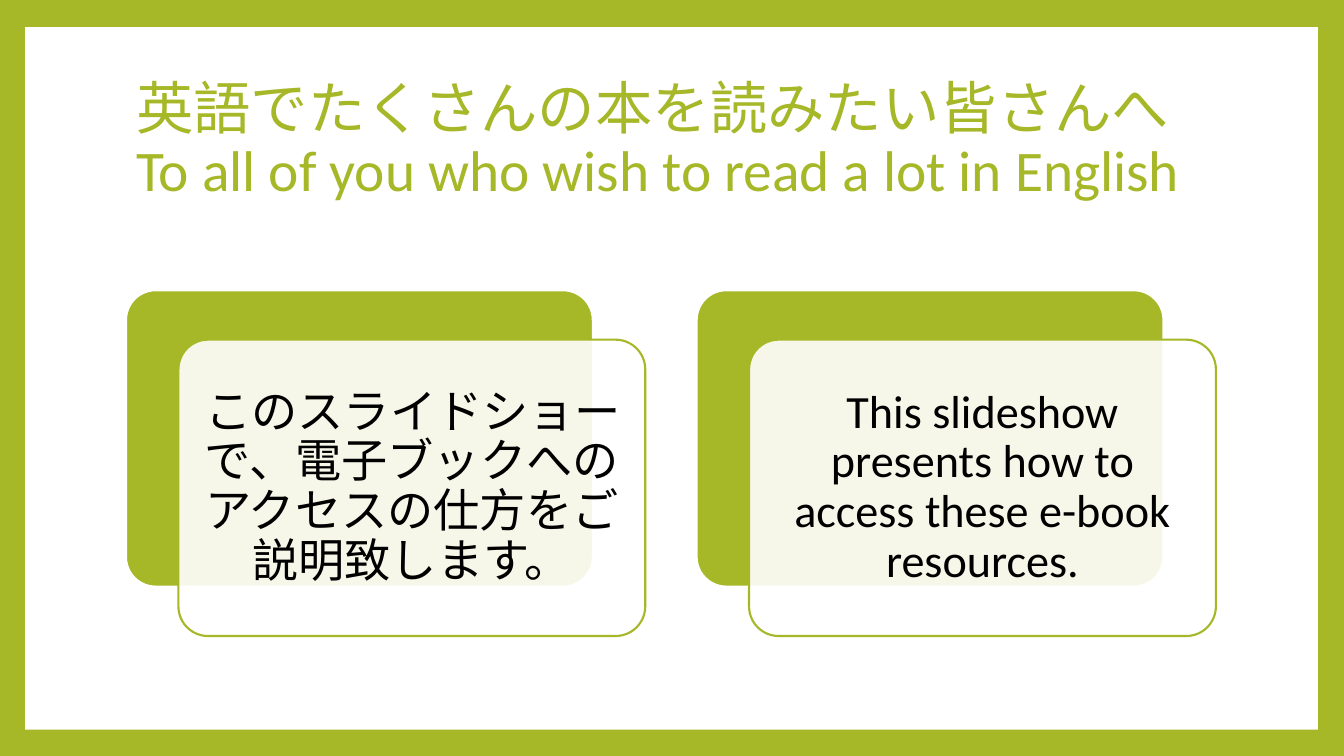
from lxml import etree
from pptx import Presentation
from pptx.dml.color import RGBColor
from pptx.enum.shapes import MSO_SHAPE as Preset
from pptx.enum.text import MSO_ANCHOR as Anchor, MSO_AUTO_SIZE as AutoSize, PP_ALIGN as Align
from pptx.oxml.ns import qn
from pptx.util import Inches, Pt

TITLE_LINES = ["英語でたくさんの本を読みたい皆さんへ",
               "To all of you who wish to read a lot in English"]
MESSAGES = ["このスライドショーで、電子ブックへのアクセスの仕方をご説明致します。",
            "This slideshow presents how to access these e-book resources."]
GREEN, WHITE, BLACK = "A6B727", "FFFFFF", "000000"
FONT = "Calibri"

CARD_LEFT, CARD_TOP = 1.25, 2.88
CARD_WIDTH, CARD_HEIGHT = 4.63, 2.94
CARD_PITCH = 5.66
OFFSET_X, OFFSET_Y = 0.52, 0.49
TEXT_INSET = 0.14


def rgb(value):
    return RGBColor.from_string(value)


def add_box(slide, preset, left, top, width, height, fill, line=None):
    box = slide.shapes.add_shape(preset, Inches(left), Inches(top), Inches(width), Inches(height))
    box.shadow.inherit = False
    box.fill.solid()
    box.fill.fore_color.rgb = rgb(fill)
    if line:
        box.line.color.rgb = rgb(line)
        box.line.width = Pt(1.5)
    else:
        box.line.fill.background()
    return box


def add_card(slide, left, top, fill, line):
    card = add_box(slide, Preset.ROUNDED_RECTANGLE, left, top, CARD_WIDTH, CARD_HEIGHT, fill, line)
    card.adjustments[0] = 0.1
    return card


def set_opacity(shape, percent):
    color = shape.fill._xPr.find(qn("a:solidFill"))[0]
    etree.SubElement(color, qn("a:alpha")).set("val", str(percent * 1000))


def style(paragraph, size, color, align):
    paragraph.alignment = align
    paragraph.line_spacing = 0.9
    paragraph.font.name = FONT
    paragraph.font.size = Pt(size)
    paragraph.font.color.rgb = rgb(color)


def add_title(slide):
    title = slide.shapes.title
    title.left, title.top = Inches(1.25), Inches(0.67)
    title.width, title.height = Inches(10.8), Inches(1.48)
    frame = title.text_frame
    frame.auto_size = AutoSize.NONE
    frame.word_wrap = True
    frame.vertical_anchor = Anchor.MIDDLE
    heading = frame.paragraphs[0]
    japanese, english = TITLE_LINES
    heading.add_run().text = japanese
    heading.add_line_break()
    heading.add_run().text = english
    style(heading, 41, GREEN, Align.LEFT)


def add_message(slide, left, message):
    add_card(slide, left, CARD_TOP, GREEN, WHITE)
    front = add_card(slide, left + OFFSET_X, CARD_TOP + OFFSET_Y, WHITE, GREEN)
    set_opacity(front, 90)
    frame = front.text_frame
    frame.word_wrap = True
    frame.vertical_anchor = Anchor.MIDDLE
    frame.margin_left = frame.margin_right = Inches(TEXT_INSET)
    frame.margin_top = frame.margin_bottom = Inches(TEXT_INSET)
    frame.text = message
    style(frame.paragraphs[0], 33, BLACK, Align.CENTER)


def main():
    prs = Presentation()
    prs.slide_width, prs.slide_height = Inches(13.33), Inches(7.5)
    slide = prs.slides.add_slide(prs.slide_layouts[5])
    slide.background.fill.solid()
    slide.background.fill.fore_color.rgb = rgb(GREEN)

    page = add_box(slide, Preset.RECTANGLE, 0.25, 0.27, 12.82, 6.97, WHITE)
    slide.shapes.title._element.addprevious(page._element)
    add_title(slide)
    for column, message in enumerate(MESSAGES):
        add_message(slide, CARD_LEFT + column * CARD_PITCH, message)

    prs.save("out.pptx")


if __name__ == "__main__":
    main()
